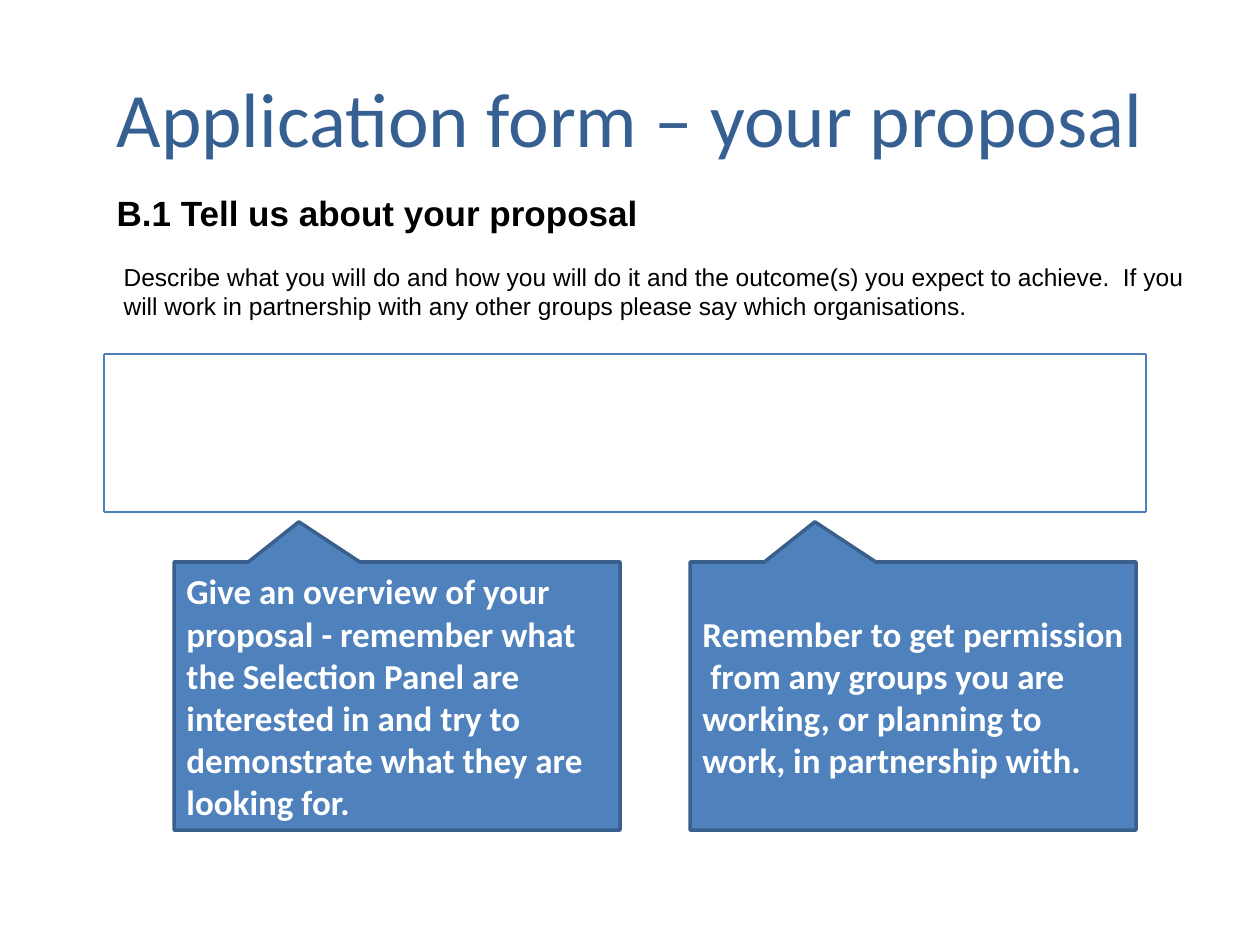
from lxml import etree
from pptx import Presentation
from pptx.dml.color import RGBColor
from pptx.enum.shapes import MSO_CONNECTOR, MSO_SHAPE
from pptx.enum.text import MSO_ANCHOR, MSO_AUTO_SIZE, PP_ALIGN
from pptx.oxml.ns import qn
from pptx.util import Emu, Pt

LINE = MSO_CONNECTOR.STRAIGHT
CALLOUT = MSO_SHAPE.RECTANGULAR_CALLOUT
MIDDLE, TOP = MSO_ANCHOR.MIDDLE, MSO_ANCHOR.TOP
LEFT, CENTER = PP_ALIGN.LEFT, PP_ALIGN.CENTER
NO_FIT = MSO_AUTO_SIZE.NONE

SCALE = 914400 / 126
COLORS = {
    "title": "376092",
    "text": "000000",
    "frame": "4B7EBC",
    "fill": "4F81BD",
    "edge": "3A5F8C",
    "white": "FFFFFF",
}
TIPS = [
    "Give an overview of your proposal - remember what the Selection Panel are "
    "interested in and try to demonstrate what they are looking for.",
    "Remember to get permission  from any groups you are working, or planning to "
    "work, in partnership with.",
]


def px(n):
    return Emu(round(n * SCALE))


def color(name):
    return RGBColor.from_string(COLORS[name])


def place(shape, box):
    shape.left, shape.top, shape.width, shape.height = map(px, box)


def write(para, text, size, font="Calibri", ink="text", bold=False,
          align=LEFT, before=0, pitch=None, indent=None):
    """Fill a paragraph; an indent also switches its bullet off."""
    run = para.add_run()
    run.text = text
    run.font.size, run.font.name, run.font.bold = Pt(size), font, bold
    run.font.color.rgb = color(ink)
    para.alignment = align
    para.space_before = Pt(before)
    if pitch:
        para.line_spacing = Pt(pitch)
    if indent is not None:
        props = para._p.get_or_add_pPr()
        props.set("marL", str(px(indent)))
        props.set("indent", "0")
        etree.SubElement(props, qn("a:buNone"))


def add_title(slide, box):
    title = slide.shapes.title
    place(title, box)
    frame = title.text_frame
    frame.auto_size, frame.vertical_anchor = NO_FIT, MIDDLE
    write(frame.paragraphs[0], "Application form – your proposal", 44,
          ink="title", align=CENTER)


def add_body(slide, box):
    body = slide.placeholders[1]
    place(body, box)
    frame = body.text_frame
    frame.auto_size, frame.vertical_anchor = NO_FIT, TOP
    write(frame.paragraphs[0], "B.1 Tell us about your proposal", 20,
          font="Arial", bold=True, before=2, indent=40)
    write(frame.add_paragraph(),
          "Describe what you will do and how you will do it and the outcome(s) "
          "you expect to achieve.  If you will work in partnership with any "
          "other groups please say which organisations.",
          14, font="Arial", before=16, pitch=17, indent=47)


def add_frame(slide, box):
    """Draw the empty answer box as four lines."""
    x, y, w, h = box
    corners = [(x, y), (x + w, y), (x + w, y + h), (x, y + h)]
    for start, end in zip(corners, corners[1:] + corners[:1]):
        side = slide.shapes.add_connector(LINE, *map(px, start + end))
        side.line.color.rgb = color("frame")
        side.line.width = Pt(0.75)
        etree.SubElement(side._element.spPr, qn("a:effectLst"))


def add_tips(slide, box, gap):
    """Share the box among the callouts, with equal gaps."""
    x, y, w, h = box
    width = (w - gap * (len(TIPS) - 1)) / len(TIPS)
    for i, text in enumerate(TIPS):
        left = x + i * (width + gap)
        tip = slide.shapes.add_shape(CALLOUT, *map(px, (left, y, width, h)))
        tip.adjustments[0], tip.adjustments[1] = -0.22, -0.65
        tip.shadow.inherit = False
        tip.fill.solid()
        tip.fill.fore_color.rgb = color("fill")
        tip.line.color.rgb = color("edge")
        tip.line.width = Pt(2)
        frame = tip.text_frame
        frame.word_wrap, frame.vertical_anchor = True, MIDDLE
        write(frame.paragraphs[0], text, 20, ink="white", bold=True)


def main():
    deck = Presentation()
    deck.slide_width, deck.slide_height = px(1260), px(945)
    slide = deck.slides.add_slide(deck.slide_layouts[1])
    add_title(slide, (63, 38, 1134, 157))
    add_body(slide, (64, 185, 1134, 208))
    add_frame(slide, (104, 354, 1042, 158))
    add_tips(slide, (174, 562, 962, 268), gap=70)
    deck.save("out.pptx")


if __name__ == "__main__":
    main()
